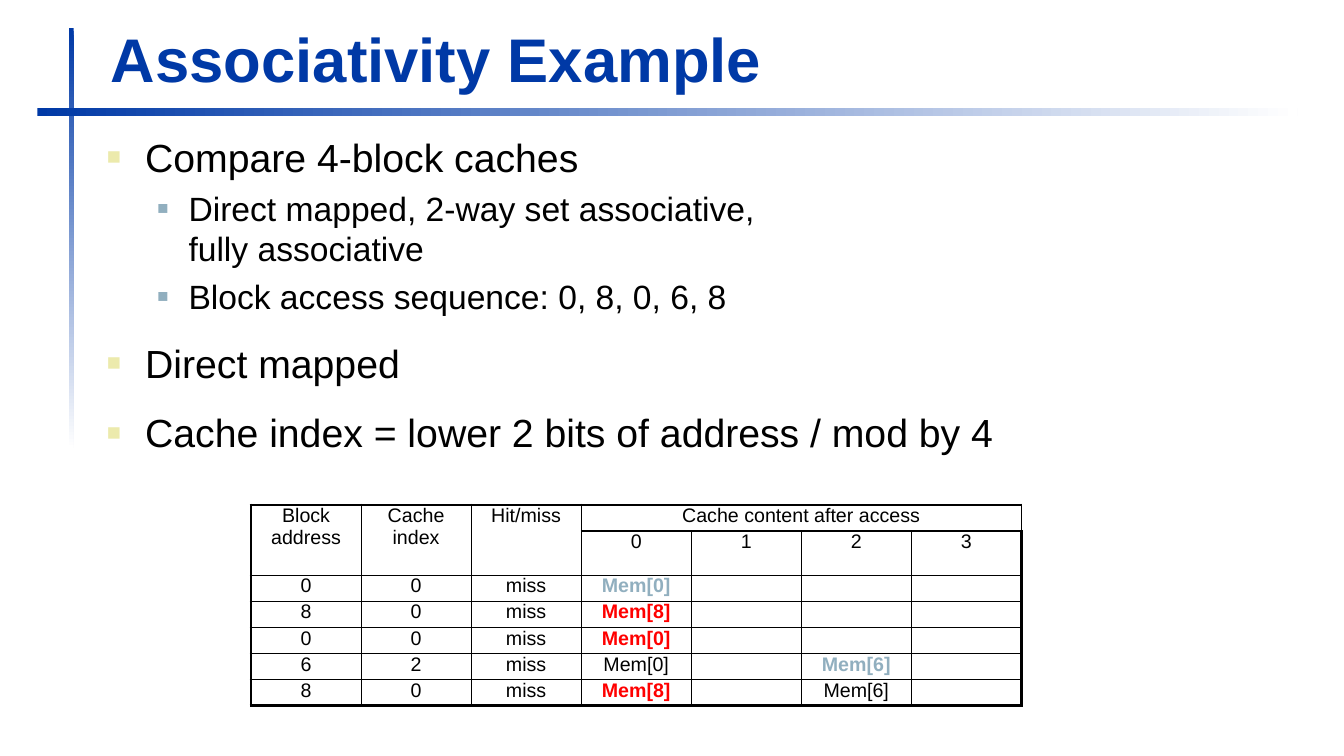
import lxml.etree
import pptx
import pptx.dml.color
import pptx.enum.shapes
import pptx.enum.text
import pptx.oxml.ns
import pptx.util
from pptx.util import Inches

FONT = "Arial"
BLUE, BLACK, WHITE, RED = "0039A6", "000000", "FFFFFF", "FF0000"
SAND, STEEL = "ECEAAC", "91AFBF"
BULLETS = [
    (0, 0, "Compare 4-block caches"),
    (1, 5.5, "Direct mapped, 2-way set associative,\vfully associative"),
    (1, 5.5, "Block access sequence: 0, 8, 0, 6, 8"),
    (0, 16, "Direct mapped"),
    (0, 16, "Cache index = lower 2 bits of address / mod by 4"),
]
LEVELS = [(28, 0.38, 0.38, SAND, 60), (24, 0.81, 0.31, STEEL, 55)]
ROWS = [
    ["Block address", "Cache index", "Hit/miss", "Cache content after access", "", "", ""],
    ["", "", "", "0", "1", "2", "3"],
    ["0", "0", "miss", "Mem[0]", "", "", ""],
    ["8", "0", "miss", "Mem[8]", "", "", ""],
    ["0", "0", "miss", "Mem[0]", "", "", ""],
    ["6", "2", "miss", "Mem[0]", "", "Mem[6]", ""],
    ["8", "0", "miss", "Mem[8]", "", "Mem[6]", ""],
]
LOADED = {(2, 3): STEEL, (3, 3): RED, (4, 3): RED, (5, 5): STEEL, (6, 3): RED}
MERGES = [((0, 0), (1, 0)), ((0, 1), (1, 1)), ((0, 2), (1, 2)), ((0, 3), (0, 6))]


def rgb(value):
    """Turn a hex string into a colour."""
    return pptx.dml.color.RGBColor.from_string(value)


def add_element(parent, tag, **attrs):
    """Append a drawing element with its attributes."""
    names = {name: str(value) for name, value in attrs.items()}
    return lxml.etree.SubElement(parent, pptx.oxml.ns.qn("a:" + tag), names)


def style_run(r, size, color=BLACK, bold=False):
    """Format one run."""
    r.font.name = FONT
    r.font.size = pptx.util.Pt(size)
    r.font.bold = bold
    r.font.color.rgb = rgb(color)


def place(sp, box):
    """Move a shape into a box given in inches."""
    sp.left, sp.top, sp.width, sp.height = map(Inches, box)


def add_bar(s, box, angle):
    """Draw a rule that fades from blue to white."""
    rectangle = pptx.enum.shapes.MSO_SHAPE.RECTANGLE
    sp = s.shapes.add_shape(rectangle, *map(Inches, box))
    sp.shadow.inherit = False
    sp.line.fill.background()
    sp.fill.gradient()
    sp.fill.gradient_angle = angle
    for stop, color in zip(sp.fill.gradient_stops, (BLUE, WHITE)):
        stop.color.rgb = rgb(color)


def fill_title(s, box, text):
    """Place and format the title."""
    sp = s.shapes.title
    place(sp, box)
    tf = sp.text_frame
    tf.text = text
    tf.auto_size = pptx.enum.text.MSO_AUTO_SIZE.NONE
    tf.vertical_anchor = pptx.enum.text.MSO_ANCHOR.BOTTOM
    p = tf.paragraphs[0]
    p.alignment = pptx.enum.text.PP_ALIGN.LEFT
    style_run(p.runs[0], 44, BLUE, True)


def fill_body(s, box):
    """Place and format the bulleted list."""
    sp = s.placeholders[1]
    place(sp, box)
    tf = sp.text_frame
    tf.auto_size = pptx.enum.text.MSO_AUTO_SIZE.NONE
    tf.margin_top = Inches(0.09)
    for i, (level, space, text) in enumerate(BULLETS):
        size, margin, hang, color, percent = LEVELS[level]
        p = tf.add_paragraph() if i else tf.paragraphs[0]
        p.text = text
        p.level = level
        p.space_before = pptx.util.Pt(space)
        pPr = p._p.get_or_add_pPr()
        pPr.set("marL", str(Inches(margin)))
        pPr.set("indent", str(-Inches(hang)))
        add_element(add_element(pPr, "buClr"), "srgbClr", val=color)
        add_element(pPr, "buSzPct", val=percent * 1000)
        add_element(pPr, "buFont", typeface=FONT)
        add_element(pPr, "buChar", char="■")
        for r in p.runs:
            style_run(r, size)
        for br in p._p.findall(pptx.oxml.ns.qn("a:br")):
            add_element(br, "rPr", sz=size * 100)


def set_borders(cell, row, col):
    """Draw thin inner and thick outer cell borders."""
    edges = [("lnL", col == 0), ("lnR", col == len(ROWS[0]) - 1),
             ("lnT", row == 0), ("lnB", row == len(ROWS) - 1)]
    tcPr = cell._tc.get_or_add_tcPr()
    for tag, outer in edges:
        ln = add_element(tcPr, tag, w=pptx.util.Pt(2.25 if outer else 1))
        add_element(add_element(ln, "solidFill"), "srgbClr", val=BLACK)


def add_cache_table(s, box):
    """Build the table of cache accesses."""
    n_rows, n_cols = len(ROWS), len(ROWS[0])
    table = s.shapes.add_table(n_rows, n_cols, *map(Inches, box)).table
    table.first_row = table.horz_banding = False
    for column in table.columns:
        column.width = Inches(box[2] / n_cols)
    for i, texts in enumerate(ROWS):
        table.rows[i].height = Inches(box[3] / n_rows)
        for j, text in enumerate(texts):
            cell = table.cell(i, j)
            set_borders(cell, i, j)
            cell.fill.background()
            cell.margin_left = cell.margin_right = Inches(0.1)
            cell.margin_top = cell.margin_bottom = 0
            p = cell.text_frame.paragraphs[0]
            p.alignment = pptx.enum.text.PP_ALIGN.CENTER
            if text:
                p.text = text
                style_run(p.runs[0], 14, LOADED.get((i, j), BLACK), (i, j) in LOADED)
            else:
                end = add_element(p._p, "endParaRPr", sz=1400)
                add_element(end, "latin", typeface=FONT)
    for first, last in MERGES:
        table.cell(*first).merge(table.cell(*last))


def main():
    """Build and save the slide."""
    prs = pptx.Presentation()
    prs.slide_width, prs.slide_height = Inches(13.33), Inches(7.5)
    s = prs.slides.add_slide(prs.slide_layouts[1])
    add_bar(s, (0.68, 0.28, 0.05, 4.17), 270)
    add_bar(s, (0.37, 1.07, 12.5, 0.08), 0)
    fill_title(s, (1, 0.16, 12.04, 0.83), "Associativity Example")
    fill_body(s, (0.96, 1.23, 9.05, 3.07))
    add_cache_table(s, (2.49, 5.01, 7.64, 1.81))
    prs.save("out.pptx")


if __name__ == "__main__":
    main()
